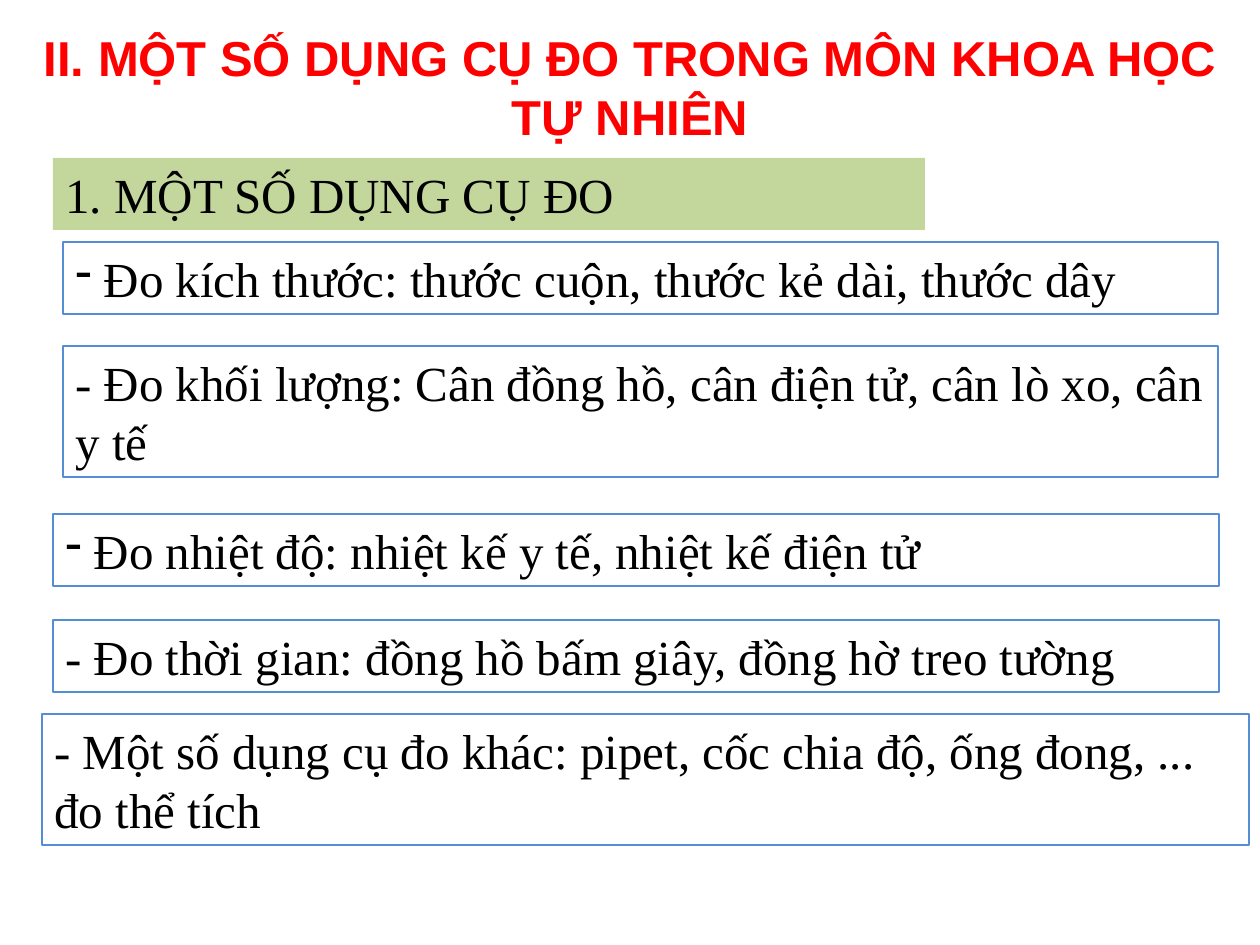
"""Build a slide listing measuring tools used in natural science."""
from dataclasses import dataclass

from lxml.etree import SubElement
from pptx import Presentation
from pptx.dml.color import RGBColor as RGB
from pptx.enum.shapes import MSO_SHAPE as Shape
from pptx.enum.text import MSO_ANCHOR as Anchor, MSO_AUTO_SIZE as Fit, PP_ALIGN as Align
from pptx.oxml.ns import qn
from pptx.util import Pt


@dataclass(frozen=True)
class Theme:
    red: RGB = RGB(255, 0, 0)
    green: RGB = RGB(0xC3, 0xD6, 0x9B)
    blue: RGB = RGB(0x55, 0x8E, 0xD5)
    black: RGB = RGB(0, 0, 0)
    head: str = "Arial"
    body: str = "Times New Roman"
    size: Pt = Pt(28)
    line: Pt = Pt(1.5)


LOOK = Theme()
SCALE = 914400 / 126
ROW = {1: 72, 2: 131}

TITLE = ("II. MỘT SỐ DỤNG CỤ ĐO TRONG MÔN KHOA HỌC TỰ NHIÊN", 21, 21, 1218, 2)
TOPIC = ("1. MỘT SỐ DỤNG CỤ ĐO", 53, 158, 872, 1)
TOOLS = [
    (" Đo kích thước: thước cuộn, thước kẻ dài, thước dây", 63, 242, 1155, 1, True),
    ("- Đo khối lượng: Cân đồng hồ, cân điện tử, cân lò xo, cân y tế", 63, 346, 1155, 2, False),
    (" Đo nhiệt độ: nhiệt kế y tế, nhiệt kế điện tử", 53, 514, 1166, 1, True),
    ("- Đo thời gian: đồng hồ bấm giây, đồng hờ treo tường", 53, 620, 1166, 1, False),
    ("- Một số dụng cụ đo khác: pipet, cốc chia độ, ống đong, ... đo thể tích",
     42, 714, 1207, 2, False),
]


def px(num):
    return round(num * SCALE)


def write(shape, text, face, color, align=Align.LEFT, anchor=Anchor.TOP):
    frame = shape.text_frame
    frame.word_wrap = True
    frame.auto_size = Fit.SHAPE_TO_FIT_TEXT
    frame.vertical_anchor = anchor
    para = frame.paragraphs[0]
    para.text = text
    para.alignment = align
    font = para.font
    font.name, font.size, font.color.rgb = face, LOOK.size, color
    return para


def add_title(slide, text, left, top, width, rows):
    box = slide.shapes.add_textbox(*map(px, (left, top, width, ROW[rows])))
    para = write(box, text, LOOK.head, LOOK.red, Align.CENTER, Anchor.MIDDLE)
    para.font.bold = True


def add_box(slide, text, left, top, width, rows, dash=False, fill=None, line=None):
    box = slide.shapes.add_shape(Shape.RECTANGLE, *map(px, (left, top, width, ROW[rows])))
    box.shadow.inherit = False
    if fill:
        box.fill.solid()
        box.fill.fore_color.rgb = fill
    else:
        box.fill.background()
    if line:
        box.line.color.rgb = line
        box.line.width = LOOK.line
    else:
        box.line.fill.background()
    para = write(box, text, LOOK.body, LOOK.black)
    if dash:
        props = para._p.get_or_add_pPr()
        mark = SubElement(props, qn("a:buChar"), char="-")
        mark.addprevious(SubElement(props, qn("a:buFontTx")))
        props.append(props.find(qn("a:defRPr")))


def main():
    deck = Presentation()
    deck.slide_width, deck.slide_height = px(1260), px(945)
    slide = deck.slides.add_slide(deck.slide_layouts[6])
    add_title(slide, *TITLE)
    add_box(slide, *TOPIC, fill=LOOK.green)
    for tool in TOOLS:
        add_box(slide, *tool, line=LOOK.blue)
    deck.save("out.pptx")


if __name__ == "__main__":
    main()
